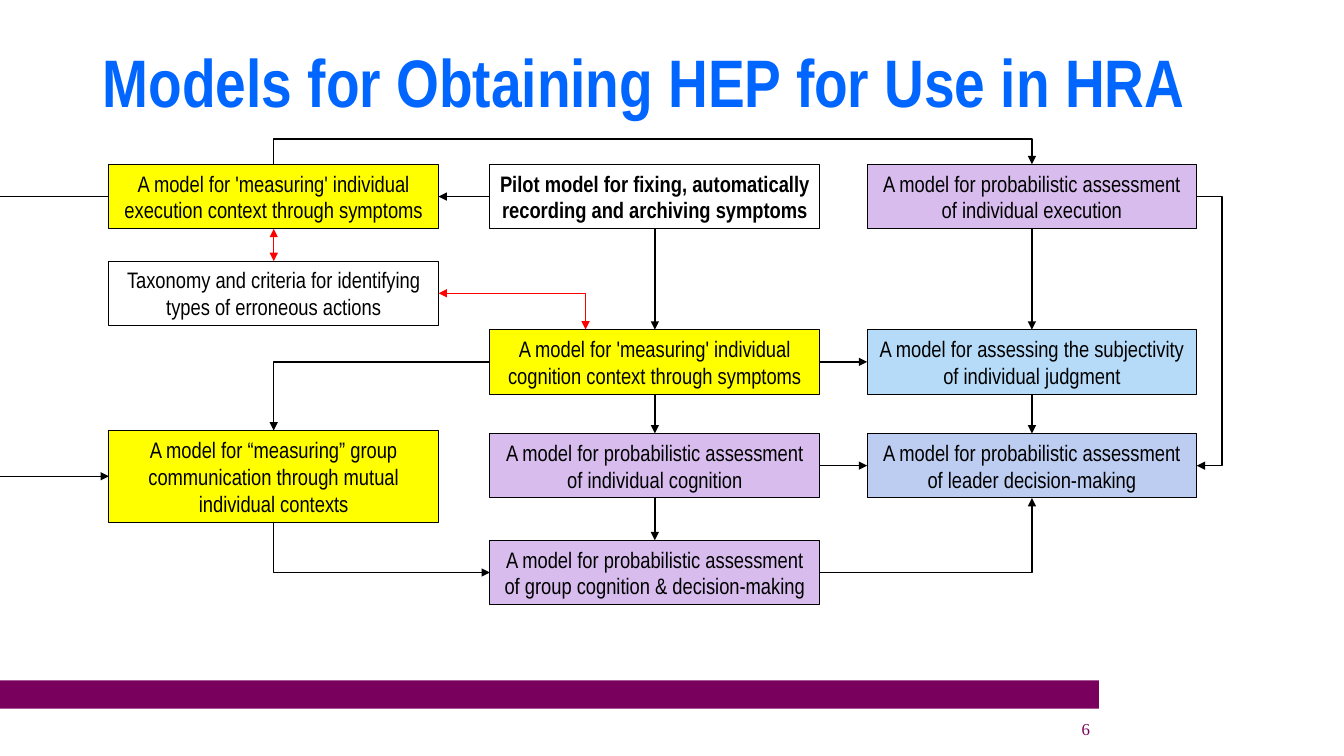
from lxml import etree
from pptx import Presentation
from pptx.dml.color import RGBColor
from pptx.enum.shapes import MSO_CONNECTOR as Connector, MSO_SHAPE as Preset
from pptx.enum.text import MSO_ANCHOR as Anchor, PP_ALIGN as Align
from pptx.oxml.ns import qn
from pptx.util import Inches, Pt

BLACK = RGBColor(0, 0, 0)
WHITE = RGBColor(0xFF, 0xFF, 0xFF)
RED = RGBColor(0xFF, 0, 0)
BLUE = RGBColor(0, 0x66, 0xFF)
PLUM = RGBColor(0x7A, 0, 0x5E)
YELLOW = RGBColor(0xFF, 0xFF, 0)
LILAC = RGBColor(0xD7, 0xBC, 0xED)
SKY = RGBColor(0xB5, 0xDB, 0xF8)
PERIWINKLE = RGBColor(0xBD, 0xCD, 0xF1)

# Content
TITLE = "Models for Obtaining HEP for Use in HRA"
PAGE_NUMBER = "6"

COLUMNS = (1.08, 4.86, 8.6)
ROWS = {"top": 1.63, "taxonomy": 2.59, "middle": 3.27,
        "group": 4.27, "lower": 4.3, "bottom": 5.36}
BOX_WIDTH, BOX_HEIGHT, TALL_HEIGHT = 3.27, 0.64, 0.91
DETOUR = 0.25

# name: (column, row, height, fill, text)
BOXES = {
    "pilot": (1, "top", BOX_HEIGHT, WHITE,
              "Pilot model for fixing, automatically recording and archiving symptoms"),
    "taxonomy": (0, "taxonomy", BOX_HEIGHT, WHITE,
                 "Taxonomy and criteria for identifying types of erroneous actions"),
    "cognition context": (1, "middle", BOX_HEIGHT, YELLOW,
                          "A model for 'measuring' individual cognition context through symptoms"),
    "group context": (0, "group", TALL_HEIGHT, YELLOW,
                      "A model for “measuring” group communication through mutual individual contexts"),
    "judgment": (2, "middle", BOX_HEIGHT, SKY,
                 "A model for assessing the subjectivity of individual judgment"),
    "execution context": (0, "top", BOX_HEIGHT, YELLOW,
                          "A model for 'measuring' individual execution context through symptoms"),
    "cognition": (1, "lower", BOX_HEIGHT, LILAC,
                  "A model for probabilistic assessment of individual cognition"),
    "group cognition": (1, "bottom", BOX_HEIGHT, LILAC,
                        "A model for probabilistic assessment of group cognition & decision-making"),
    "execution": (2, "top", BOX_HEIGHT, LILAC,
                  "A model for probabilistic assessment of individual execution"),
    "leader": (2, "lower", BOX_HEIGHT, PERIWINKLE,
               "A model for probabilistic assessment of leader decision-making"),
}
BOLD_BOX = "pilot"

# (from box, side, to box, side)
LINKS = [
    ("pilot", "left", "execution context", "right"),
    ("pilot", "bottom", "cognition context", "top"),
    ("execution context", "top", "execution", "top"),
    ("cognition context", "left", "group context", "top"),
    ("cognition context", "right", "judgment", "left"),
    ("cognition context", "bottom", "cognition", "top"),
    ("execution", "bottom", "judgment", "top"),
    ("group context", "bottom", "group cognition", "left"),
    ("cognition", "bottom", "group cognition", "top"),
    ("group cognition", "right", "leader", "bottom"),
    ("judgment", "bottom", "leader", "top"),
    ("cognition", "right", "leader", "left"),
    ("execution", "right", "leader", "right"),
]
TWO_WAY_LINKS = [
    ("execution context", "bottom", "taxonomy", "top"),
    ("taxonomy", "right", "cognition context", "upper left"),
]

# Position of each side's docking point, as shares of a box
DOCKS = {"left": (0, 0.5), "right": (1, 0.5), "top": (0.5, 0),
         "bottom": (0.5, 1), "upper left": (0.29, 0)}
SIDEWAYS = ("left", "right")


def dock(name, side):
    column, row, height = BOXES[name][:3]
    across, down = DOCKS[side]
    return COLUMNS[column] + across * BOX_WIDTH, ROWS[row] + down * height


def route(start_box, start_side, end_box, end_side):
    start, end = dock(start_box, start_side), dock(end_box, end_side)
    if start_side == end_side == "top":
        level = min(start[1], end[1]) - DETOUR
        bends = [(start[0], level), (end[0], level)]
    elif start_side == end_side == "right":
        level = max(start[0], end[0]) + DETOUR
        bends = [(level, start[1]), (level, end[1])]
    elif (start_side in SIDEWAYS) == (end_side in SIDEWAYS):
        bends = []
    elif start_side in SIDEWAYS:
        bends = [(end[0], start[1])]
    else:
        bends = [(start[0], end[1])]
    return [start, *bends, end]


def draw_route(points, color=BLACK, ends=("tailEnd",)):
    corners = [(Inches(x), Inches(y)) for x, y in points]
    if len(corners) == 2:
        shape = slide.shapes.add_connector(Connector.STRAIGHT, *corners[0], *corners[1])
        etree.SubElement(shape._element.spPr, qn("a:effectLst"))
    else:
        builder = slide.shapes.build_freeform(*corners[0])
        builder.add_line_segments(corners[1:], close=False)
        shape = builder.convert_to_shape()
        shape.shadow.inherit = False
        shape.fill.background()
    shape.line.color.rgb = color
    shape.line.width = Pt(1)
    outline = shape.line._get_or_add_ln()
    for end in ends:
        etree.SubElement(outline, qn("a:" + end), type="triangle")


def write(shape, text, size, font_name, color, align, bold=False):
    frame = shape.text_frame
    frame.word_wrap = True
    frame.vertical_anchor = Anchor.MIDDLE
    paragraph = frame.paragraphs[0]
    paragraph.alignment = align
    run = paragraph.add_run()
    run.text = text
    run.font.size = Pt(size)
    run.font.name = font_name
    run.font.bold = bold
    run.font.color.rgb = color
    return paragraph


def add_rectangle(left, top, width, height, fill):
    shape = slide.shapes.add_shape(
        Preset.RECTANGLE, Inches(left), Inches(top), Inches(width), Inches(height))
    shape.shadow.inherit = False
    shape.fill.solid()
    shape.fill.fore_color.rgb = fill
    shape.line.fill.background()
    return shape


presentation = Presentation()
presentation.slide_width, presentation.slide_height = Inches(13.33), Inches(7.5)
slide = presentation.slides.add_slide(presentation.slide_layouts[6])

# Footer bar, title and page number
add_rectangle(0, 6.75, 10.9, 0.28, PLUM)
title = slide.shapes.add_textbox(Inches(0.92), Inches(0.31), Inches(11.65), Inches(1.08))
write(title, TITLE, 48, "Arial Narrow", BLUE, Align.LEFT, bold=True).line_spacing = 0.9
number = slide.shapes.add_textbox(Inches(9.42), Inches(7.03), Inches(1.49), Inches(0.4))
write(number, PAGE_NUMBER, 12, "Times New Roman", PLUM, Align.RIGHT)

# Model boxes
for name, (column, row, height, fill, text) in BOXES.items():
    box = add_rectangle(COLUMNS[column], ROWS[row], BOX_WIDTH, height, fill)
    box.line.color.rgb = BLACK
    box.line.width = Pt(0.75)
    write(box, text, 16, "Arial Narrow", BLACK, Align.CENTER, bold=name == BOLD_BOX)

# Arrows between the boxes
for link in LINKS:
    draw_route(route(*link))
for link in TWO_WAY_LINKS:
    draw_route(route(*link), RED, ("headEnd", "tailEnd"))

# Link that runs around by the slide's left edge
leaving, entering = dock("execution context", "left"), dock("group context", "left")
draw_route([leaving, (0, leaving[1])], ends=())
draw_route([(0, entering[1]), entering])

presentation.save("out.pptx")
